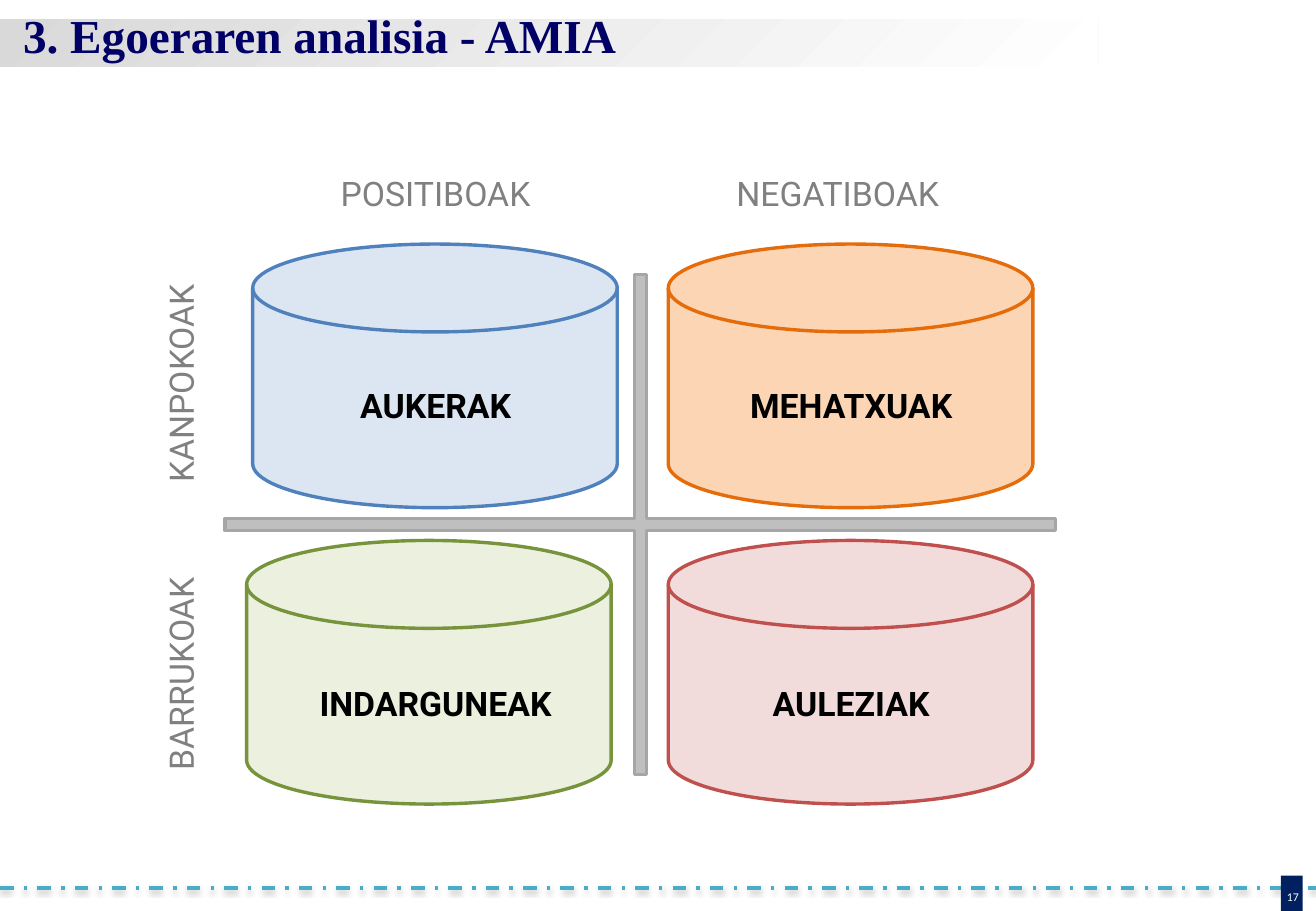
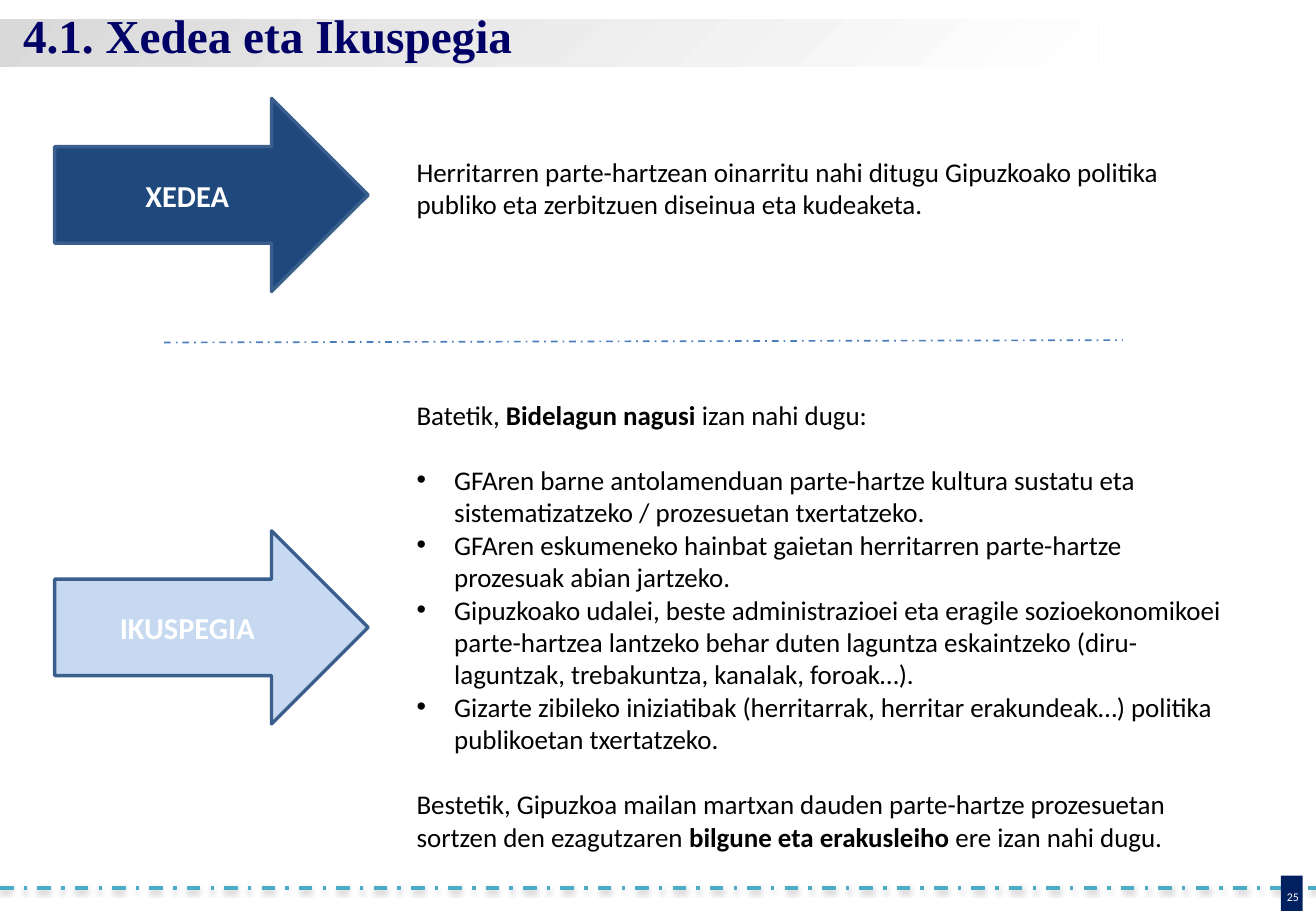
from lxml import etree
from pptx import Presentation
from pptx.dml.color import RGBColor
from pptx.enum.dml import MSO_LINE
from pptx.enum.shapes import MSO_CONNECTOR, MSO_SHAPE
from pptx.enum.text import MSO_ANCHOR, MSO_AUTO_SIZE, PP_ALIGN
from pptx.oxml.ns import qn
from pptx.util import Inches, Pt

RECTANGLE = MSO_SHAPE.RECTANGLE
PLUS = MSO_SHAPE.MATH_PLUS
DISK = MSO_SHAPE.FLOWCHART_MAGNETIC_DISK
ARROW = MSO_SHAPE.RIGHT_ARROW
STRAIGHT = MSO_CONNECTOR.STRAIGHT
DASH_DOT = MSO_LINE.DASH_DOT
TOP, MIDDLE, BOTTOM = MSO_ANCHOR.TOP, MSO_ANCHOR.MIDDLE, MSO_ANCHOR.BOTTOM
LEFT, CENTER = PP_ALIGN.LEFT, PP_ALIGN.CENTER
GROW = MSO_AUTO_SIZE.SHAPE_TO_FIT_TEXT

WIDTH, HEIGHT = 10.83, 7.5
BODY, HEADING, DIAGRAM = "Calibri", "Times New Roman", "Roboto"
WHITE, BLACK, GREY = "FFFFFF", "000000", "808080"
NAVY, TITLE_BLUE, ARROW_EDGE = "002060", "000066", "3A5F8C"
BLANK_LINE = 19.5


def rgb(color):
    return RGBColor.from_string(color)


def child(parent, tag, **attributes):
    return etree.SubElement(parent, qn(tag), {k: str(v) for k, v in attributes.items()})


class Deck:
    def __init__(self):
        self.prs = Presentation()
        self.prs.slide_width, self.prs.slide_height = Inches(WIDTH), Inches(HEIGHT)
        self.slide = None

    def new_slide(self, title, number):
        """Start a slide with the shared title band and numbered footer."""
        self.slide = self.prs.slides.add_slide(self.prs.slide_layouts[6])
        effects = self.line((0, 7.31), (WIDTH, 7.31), "4BACC6", 2)
        shadow = child(effects, "a:outerShdw", blurRad=Pt(3.1), dist=Pt(1.6),
                       dir=5400000, rotWithShape=0)
        child(child(shadow, "a:srgbClr", val=BLACK), "a:alpha", val=38000)
        self.shape(RECTANGLE, (10.54, 7.21, 0.18, 0.3), NAVY)
        self.text((10.45, 7.21, 0.38, 0.23), number, 7, WHITE, align=CENTER,
                  anchor=BOTTOM, insets=(0, 0, 0, 0))
        self.title_band()
        self.text((0, 0.06, WIDTH, 0.5), title, 28, TITLE_BLUE, HEADING, True,
                  anchor=BOTTOM, insets=(0.19, 0.04, 0.04, 0.04))

    def title_band(self):
        """Band that fades from grey at top left to white at bottom right."""
        band = self.shape(RECTANGLE, (0, 0.16, 9.04, 0.39), WHITE)
        band.fill.gradient()
        for stop, color in zip(band.fill.gradient_stops, (WHITE, "D9D9D9")):
            stop.color.rgb = rgb(color)
        gradient = band._element.spPr.find(qn("a:gradFill"))
        gradient.remove(gradient.find(qn("a:lin")))
        circle = child(gradient, "a:path", path="circle")
        child(circle, "a:fillToRect", l=100000, t=100000)

    def shape(self, kind, box, fill, edge=None, label=None):
        shape = self.slide.shapes.add_shape(kind, *map(Inches, box))
        shape.shadow.inherit = False
        shape.fill.solid()
        shape.fill.fore_color.rgb = rgb(fill)
        if edge:
            shape.line.color.rgb = rgb(edge)
            shape.line.width = Pt(2)
        else:
            shape.line.fill.background()
        if label:
            shape.text_frame.vertical_anchor = MIDDLE
            self.paragraph(shape.text_frame.paragraphs[0], label, 18, WHITE, BODY, True, CENTER)
        return shape

    def line(self, start, end, color, width):
        """Draw a dash-dot line and return its effect list."""
        line = self.slide.shapes.add_connector(STRAIGHT, *map(Inches, start + end))
        line.line.color.rgb = rgb(color)
        line.line.width = Pt(width)
        line.line.dash_style = DASH_DOT
        return child(line._element.spPr, "a:effectLst")

    def paragraph(self, paragraph, text, size, color, font, bold, align):
        """Fill a paragraph; parts between ** marks are bold."""
        paragraph.alignment = align
        paragraph.font.size, paragraph.font.name = Pt(size), font
        paragraph.font.bold = bold
        paragraph.font.color.rgb = rgb(color)
        for index, part in enumerate(text.split("**")):
            run = paragraph.add_run()
            run.text = part
            if index % 2:
                run.font.bold = True

    def text(self, box, text, size, color, font=BODY, bold=False, align=LEFT,
             anchor=MIDDLE, insets=None, rotation=0):
        area = self.slide.shapes.add_textbox(*map(Inches, box))
        area.rotation = rotation
        frame = area.text_frame
        frame.word_wrap = True
        frame.vertical_anchor = anchor
        if insets:
            (frame.margin_left, frame.margin_top,
             frame.margin_right, frame.margin_bottom) = map(Inches, insets)
        self.paragraph(frame.paragraphs[0], text, size, color, font, bold, align)
        return frame

    def body(self, box, intro, bullets=(), closing=None):
        frame = self.text(box, intro, 16, BLACK, anchor=TOP)
        frame.auto_size = GROW
        for index, bullet in enumerate(bullets):
            item = frame.add_paragraph()
            if index == 0:
                item.space_before = Pt(BLANK_LINE)
            properties = item._p.get_or_add_pPr()
            properties.set("marL", str(Inches(0.31)))
            properties.set("indent", str(Inches(-0.31)))
            child(properties, "a:buFont", typeface="Arial")
            child(properties, "a:buChar", char="•")
            self.paragraph(item, bullet, 16, BLACK, BODY, False, LEFT)
        if closing:
            last = frame.add_paragraph()
            last.space_before = Pt(BLANK_LINE)
            self.paragraph(last, closing, 16, BLACK, BODY, False, LEFT)


def swot_slide(deck):
    deck.new_slide("3. Egoeraren analisia - AMIA", "17")
    cross = deck.shape(PLUS, (0.62, 1.52, 9.3, 5.6), "BCBCBC", "A6A6A6")
    cross.adjustments[0] = 0.018
    cross_color = cross._element.spPr.find(qn("a:solidFill")).find(qn("a:srgbClr"))
    child(cross_color, "a:alpha", val=94000)

    quadrants = [
        ("AUKERAK", 2.08, 2.01, 2.19, 3.06, "DCE6F2", "4F81BD"),
        ("INDARGUNEAK", 2.03, 4.45, 2.19, 5.51, "EBF1DE", "77933C"),
        ("AULEZIAK", 5.5, 4.45, 5.61, 5.51, "F2DCDB", "C0504D"),
        ("MEHATXUAK", 5.5, 2.01, 5.61, 3.06, "FCD5B5", "E46C0A"),
    ]
    for name, left, top, name_left, name_top, fill, edge in quadrants:
        deck.shape(DISK, (left, top, 3, 2.17), fill, edge)
        deck.text((name_left, name_top, 2.79, 0.55), name, 20, BLACK, DIAGRAM, True, CENTER)

    axis_labels = [
        ("BARRUKOAK", 0.32, 5.25, 270),
        ("KANPOKOAK", 0.32, 2.86, 270),
        ("POSITIBOAK", 2.42, 1.29, 0),
        ("NEGATIBOAK", 5.73, 1.29, 0),
    ]
    for name, left, top, rotation in axis_labels:
        deck.text((left, top, 2.33, 0.59), name, 20, GREY, DIAGRAM,
                  align=CENTER, rotation=rotation)


def mission_slide(deck):
    deck.new_slide("4.1. Xedea eta Ikuspegia", "25")
    for name, top, fill in (("XEDEA", 0.81, "1F497D"), ("IKUSPEGIA", 4.37, "C6D9F1")):
        deck.shape(ARROW, (0.45, top, 2.58, 1.59), fill, ARROW_EDGE, name)
    deck.body(
        (3.33, 1.23, 6.82, 0.64),
        "Herritarren parte-hartzean oinarritu nahi ditugu Gipuzkoako politika publiko "
        "eta zerbitzuen diseinua eta kudeaketa.")
    deck.body(
        (3.33, 3.23, 6.82, 3.87),
        "Batetik,** Bidelagun nagusi **izan nahi dugu:",
        ["GFAren barne antolamenduan parte-hartze kultura sustatu eta sistematizatzeko / "
         "prozesuetan txertatzeko.",
         "GFAren eskumeneko hainbat gaietan herritarren parte-hartze prozesuak abian jartzeko.",
         "Gipuzkoako udalei, beste administrazioei eta eragile sozioekonomikoei parte-hartzea "
         "lantzeko behar duten laguntza eskaintzeko (diru-laguntzak, trebakuntza, kanalak, "
         "foroak…).",
         "Gizarte zibileko iniziatibak (herritarrak, herritar erakundeak…) politika "
         "publikoetan txertatzeko."],
        "Bestetik, Gipuzkoa mailan martxan dauden parte-hartze prozesuetan sortzen den "
        "ezagutzaren **bilgune eta erakusleiho **ere izan nahi dugu.")
    deck.line((1.35, 2.82), (9.24, 2.8), "4B7EBC", 1)


def main():
    deck = Deck()
    swot_slide(deck)
    mission_slide(deck)
    deck.prs.save("out.pptx")


if __name__ == "__main__":
    main()
